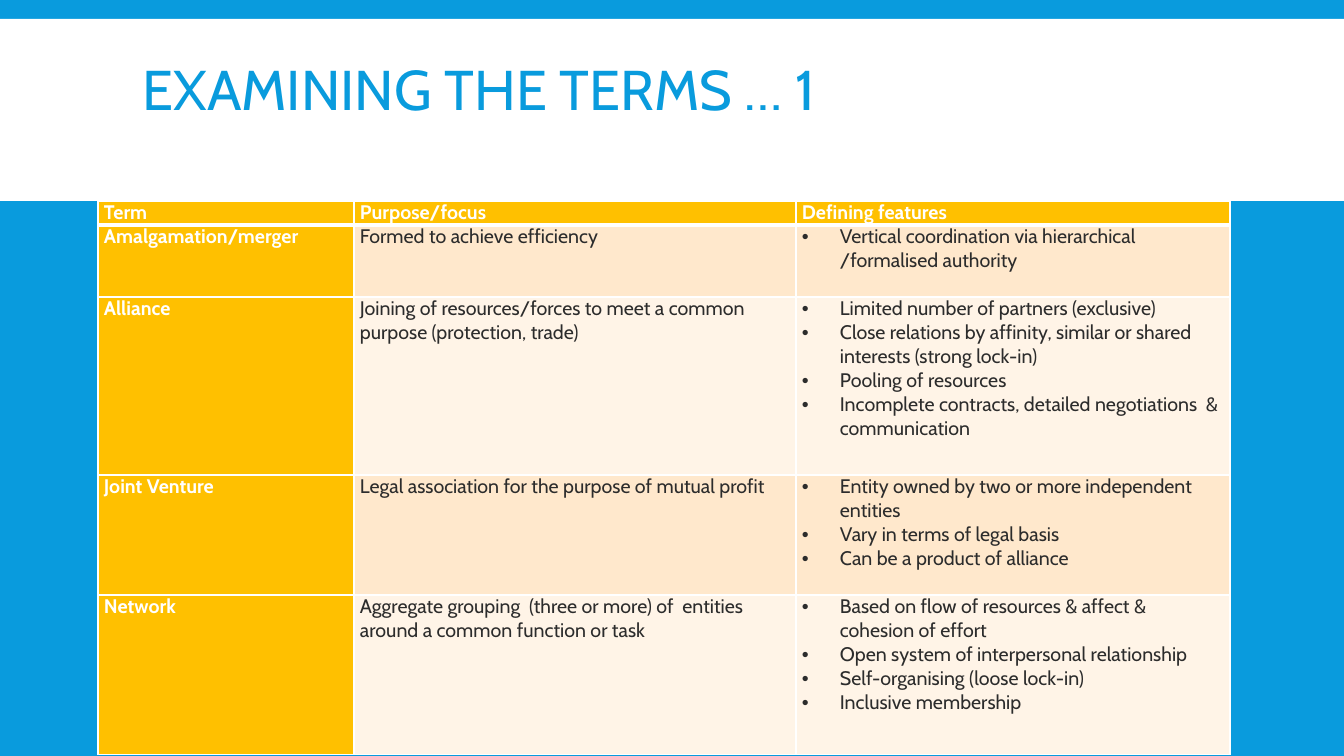
from lxml.etree import SubElement
from pptx import Presentation
from pptx.dml.color import RGBColor
from pptx.enum.shapes import MSO_SHAPE
from pptx.enum.text import MSO_ANCHOR
from pptx.oxml.ns import qn
from pptx.util import Emu, Pt

TITLE = "EXAMINING THE TERMS … 1"
HEADINGS = ("Term", "Purpose/focus", "Defining features")
TERMS = [
    ("Amalgamation/merger", "Formed to achieve efficiency",
     ["Vertical coordination via hierarchical /formalised authority"]),
    ("Alliance",
     "Joining of resources/forces to meet a common purpose (protection, trade)",
     ["Limited number of partners (exclusive)",
      "Close relations by affinity, similar or shared interests (strong lock-in)",
      "Pooling of resources",
      "Incomplete contracts, detailed negotiations  & communication"]),
    ("Joint Venture", "Legal association for the purpose of mutual profit",
     ["Entity owned by two or more independent entities",
      "Vary in terms of legal basis",
      "Can be a product of alliance"]),
    ("Network",
     "Aggregate grouping  (three or more) of  entities around a common function or task",
     ["Based on flow of resources & affect & cohesion of effort",
      "Open system of interpersonal relationship",
      "Self-organising (loose lock-in)",
      "Inclusive membership"]),
]

FONT = "Cabin"
BLUE = RGBColor(0x09, 0x9B, 0xDD)
WHITE = RGBColor(0xFF, 0xFF, 0xFF)
GOLD = RGBColor(0xFF, 0xC0, 0x00)
INK = RGBColor(0x2C, 0x2C, 0x2C)
BANDS = (RGBColor(0xFF, 0xE8, 0xCC), RGBColor(0xFF, 0xF4, 0xE7))

SLIDE_SIZE = (1344, 756)
BANNER_BOX = (0, 19, 1344, 182)
TITLE_BOX = (133, 31, 1079, 125)
TABLE_LEFT, TABLE_TOP = 98, 201
COLUMN_WIDTHS = (256, 442, 434)
ROW_HEIGHTS = (24, 72, 178, 120, 160)
CELL_INSET = 6
BULLET_INDENT = 38
THIN, THICK = Pt(1), Pt(3)


def px(length):
    return Emu(round(length * 914400 / 100.8))


def style_text(paragraph, size, color, bold=False):
    for run in paragraph.runs:
        run.font.name = FONT
        run.font.size = Pt(size)
        run.font.bold = bold
        run.font.color.rgb = color


def add_bullet(paragraph):
    properties = paragraph._p.get_or_add_pPr()
    properties.set("marL", str(px(BULLET_INDENT)))
    properties.set("indent", str(-px(BULLET_INDENT)))
    SubElement(properties, qn("a:buFont"), typeface="Arial")
    SubElement(properties, qn("a:buChar"), char="•")


def add_borders(cell, top, bottom):
    """Draw white cell edges; call before the fill, which must follow them in the XML."""
    properties = cell._tc.get_or_add_tcPr()
    for side, width in (("L", THIN), ("R", THIN), ("T", top), ("B", bottom)):
        edge = SubElement(properties, qn(f"a:ln{side}"), w=str(width))
        fill = SubElement(edge, qn("a:solidFill"))
        SubElement(fill, qn("a:srgbClr"), val=str(WHITE))


def fill_cell(cell, content, row, column):
    is_label = row == 0 or column == 0
    cell.margin_left = cell.margin_right = px(CELL_INSET)
    cell.margin_top = cell.margin_bottom = 0
    add_borders(cell, THICK if row == 1 else THIN, THICK if row == 0 else THIN)
    cell.fill.solid()
    cell.fill.fore_color.rgb = GOLD if is_label else BANDS[(row - 1) % 2]

    bulleted = isinstance(content, list)
    cell.text_frame.text = "\n".join(content) if bulleted else content
    for paragraph in cell.text_frame.paragraphs:
        style_text(paragraph, 14, WHITE if is_label else INK, is_label)
        if bulleted:
            add_bullet(paragraph)


def add_banner(slide):
    banner = slide.shapes.add_shape(MSO_SHAPE.RECTANGLE, *map(px, BANNER_BOX))
    banner.shadow.inherit = False
    banner.fill.solid()
    banner.fill.fore_color.rgb = WHITE
    banner.line.fill.background()


def add_title(slide):
    frame = slide.shapes.add_textbox(*map(px, TITLE_BOX)).text_frame
    frame.word_wrap = True
    frame.vertical_anchor = MSO_ANCHOR.MIDDLE
    frame.text = TITLE
    heading = frame.paragraphs[0]
    heading.line_spacing = 0.85
    style_text(heading, 40, BLUE)


def add_terms_table(slide):
    rows = [HEADINGS, *TERMS]
    table = slide.shapes.add_table(
        len(rows), len(HEADINGS), px(TABLE_LEFT), px(TABLE_TOP),
        px(sum(COLUMN_WIDTHS)), px(sum(ROW_HEIGHTS))).table
    table.horz_banding = False
    table.first_row = False
    for column, width in zip(table.columns, COLUMN_WIDTHS):
        column.width = px(width)
    for row, height in zip(table.rows, ROW_HEIGHTS):
        row.height = px(height)
    for r, contents in enumerate(rows):
        for c, content in enumerate(contents):
            fill_cell(table.cell(r, c), content, r, c)


def main():
    deck = Presentation()
    deck.slide_width, deck.slide_height = map(px, SLIDE_SIZE)
    slide = deck.slides.add_slide(deck.slide_layouts[6])
    slide.background.fill.solid()
    slide.background.fill.fore_color.rgb = BLUE
    add_banner(slide)
    add_title(slide)
    add_terms_table(slide)
    deck.save("out.pptx")


if __name__ == "__main__":
    main()
